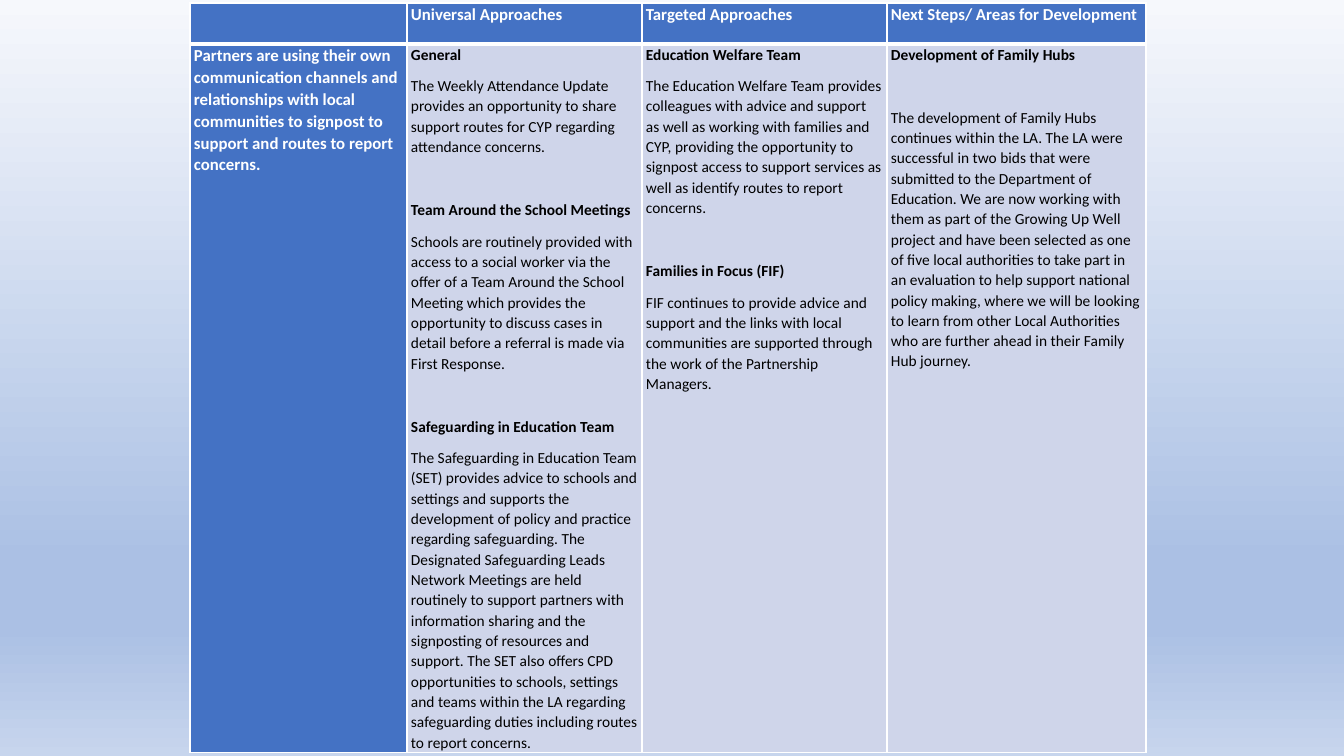
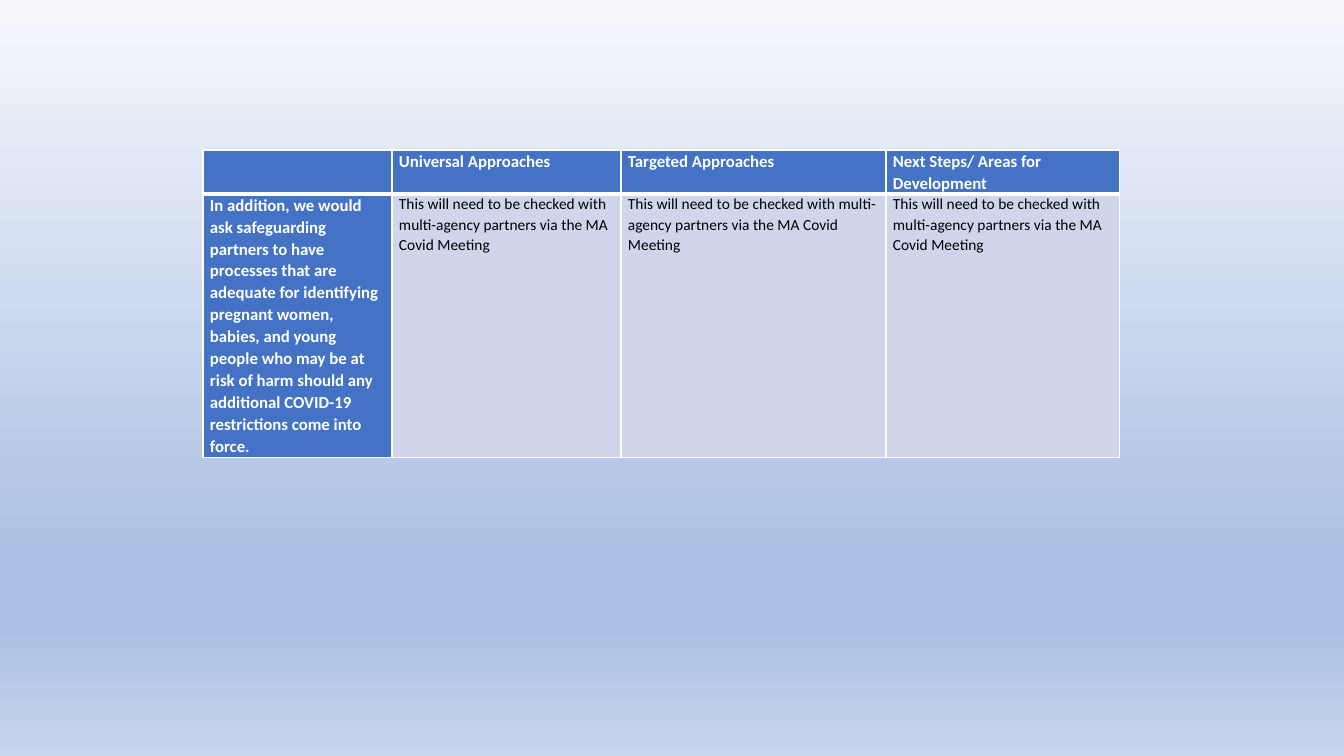
import pptx
import pptx.dml.color
import pptx.oxml
import pptx.oxml.ns
import pptx.util
from dataclasses import dataclass
from lxml import etree

CHECK = "This will need to be checked with multi-agency partners via the MA Covid Meeting"
HEADERS = ["", "Universal Approaches", "Targeted Approaches", "Next Steps/ Areas for Development"]

PAGES = [
    {
        "corner": (190, 3),
        "columns": [217, 235, 245, 259],
        "rows": [41, 707],
        "inset": 4,
        "topic": "Partners are using their own communication channels and relationships with local "
                 "communities to signpost to support and routes to report concerns.",
        "answers": [
            [
                ("heading", "General"),
                ("body", "The Weekly Attendance Update provides an opportunity to share support routes "
                         "for CYP regarding attendance concerns."),
                ("next heading", "Team Around the School Meetings"),
                ("body", "Schools are routinely provided with access to a social worker via the offer of "
                         "a Team Around the School Meeting which provides the opportunity to discuss "
                         "cases in detail before a referral is made via First Response."),
                ("next heading", "Safeguarding in Education Team"),
                ("body", "The Safeguarding in Education Team (SET) provides advice to schools and "
                         "settings and supports the development of policy and practice regarding "
                         "safeguarding. The Designated Safeguarding Leads Network Meetings are held "
                         "routinely to support partners with information sharing and the signposting "
                         "of resources and support. The SET also offers CPD opportunities to schools, "
                         "settings and teams within the LA regarding safeguarding duties including "
                         "routes to report concerns."),
            ],
            [
                ("heading", "Education Welfare Team"),
                ("body", "The Education Welfare Team provides colleagues with advice and support as well "
                         "as working with families and CYP, providing the opportunity to signpost access "
                         "to support services as well as identify routes to report concerns."),
                ("next heading", "Families in Focus (FIF)"),
                ("body", "FIF continues to provide advice and support and the links with local "
                         "communities are supported through the work of the Partnership Managers."),
            ],
            [
                ("heading", "Development of Family Hubs"),
                ("spaced body", "The development of Family Hubs continues within the LA. The LA were "
                                "successful in two bids that were submitted to the Department of "
                                "Education. We are now working with them as part of the Growing Up Well "
                                "project and have been selected as one of five local authorities to take "
                                "part in an evaluation to help support national policy making, where we "
                                "will be looking to learn from other Local Authorities who are further "
                                "ahead in their Family Hub journey."),
            ],
        ],
    },
    {
        "corner": (203, 150),
        "columns": [189, 229, 265, 234],
        "rows": [43, 264],
        "inset": 7,
        "topic": "In addition, we would ask safeguarding partners to have processes that are adequate "
                 "for identifying pregnant women, babies, and young people who may be at risk of harm "
                 "should any additional COVID-19 restrictions come into force.",
        "answers": [[("body", CHECK)]] * 3,
    },
]


@dataclass(frozen=True)
class Theme:
    font: str = "Calibri"
    accent: str = "4472C4"
    panel: str = "CFD5EA"
    white: str = "FFFFFF"
    black: str = "000000"
    sky: tuple = ((0, "F6F8FC"), (74, "ABC0E4"), (83, "ABC0E4"), (100, "C7D5ED"))
    line_spacing: float = 1.07
    after: int = 8
    thin: int = 1
    thick: int = 3


THEME = Theme()
STYLES = {
    "label": (12, THEME.white, True, 0),
    "heading": (11, THEME.black, True, 0),
    "next heading": (11, THEME.black, True, 22.5),
    "body": (11, THEME.black, False, 0),
    "spaced body": (11, THEME.black, False, 22.5),
}
SLIDE_SIZE = (1344, 756)
EMU_PER_PX = 12192000 / SLIDE_SIZE[0]


def px(length):
    return pptx.util.Emu(round(length * EMU_PER_PX))


def rgb(colour):
    return pptx.dml.color.RGBColor.from_string(colour)


def add_element(parent, tag, **attributes):
    return etree.SubElement(parent, pptx.oxml.ns.qn(tag), attributes)


def paint_background(master):
    fill = master.background.fill
    fill.gradient()
    fill.gradient_angle = 270
    stops = master.element.find(".//" + pptx.oxml.ns.qn("a:gsLst"))
    for stop in list(stops):
        stops.remove(stop)
    for percent, colour in THEME.sky:
        stop = add_element(stops, "a:gs", pos=str(percent * 1000))
        add_element(stop, "a:srgbClr", val=colour)


def draw_borders(cell, top, bottom):
    properties = cell._tc.get_or_add_tcPr()
    widths = {"a:lnL": THEME.thin, "a:lnR": THEME.thin, "a:lnT": top, "a:lnB": bottom}
    for tag, points in widths.items():
        line = add_element(properties, tag, w=str(pptx.util.Pt(points)))
        add_element(add_element(line, "a:solidFill"), "a:srgbClr", val=THEME.white)


def write(cell, passages):
    frame = cell.text_frame
    for index, (style, text) in enumerate(passages):
        paragraph = frame.add_paragraph() if index else frame.paragraphs[0]
        size, colour, bold, before = STYLES[style]
        paragraph.line_spacing = THEME.line_spacing
        paragraph.space_after = pptx.util.Pt(THEME.after)
        if before:
            paragraph.space_before = pptx.util.Pt(before)
        run = paragraph.add_run()
        run.text = text
        run.font.name = THEME.font
        run.font.size = pptx.util.Pt(size)
        run.font.bold = bold
        run.font.color.rgb = rgb(colour)


def add_approaches(slide, page):
    left, top = page["corner"]
    columns, rows = page["columns"], page["rows"]
    approaches = slide.shapes.add_table(
        len(rows), len(columns), px(left), px(top), px(sum(columns)), px(sum(rows))
    ).table
    approaches.first_row = approaches.horz_banding = False
    for column, width in zip(approaches.columns, columns):
        column.width = px(width)
    for row, height in zip(approaches.rows, rows):
        row.height = px(height)

    header_row = [[("label", header)] if header else [] for header in HEADERS]
    topic_row = [[("label", page["topic"])], *page["answers"]]
    for row, contents in enumerate((header_row, topic_row)):
        for column, passages in enumerate(contents):
            cell = approaches.cell(row, column)
            cell.margin_left = cell.margin_right = px(page["inset"])
            cell.margin_top = cell.margin_bottom = 0
            is_header = row == 0
            draw_borders(
                cell,
                THEME.thin if is_header else THEME.thick,
                THEME.thick if is_header else THEME.thin,
            )
            cell.fill.solid()
            cell.fill.fore_color.rgb = rgb(THEME.accent if is_header or column == 0 else THEME.panel)
            write(cell, passages)


def main():
    deck = pptx.Presentation()
    deck.slide_width, deck.slide_height = map(px, SLIDE_SIZE)
    paint_background(deck.slide_master)
    blank = deck.slide_layouts.get_by_name("Blank")
    for page in PAGES:
        add_approaches(deck.slides.add_slide(blank), page)
    deck.save("out.pptx")


if __name__ == "__main__":
    main()
